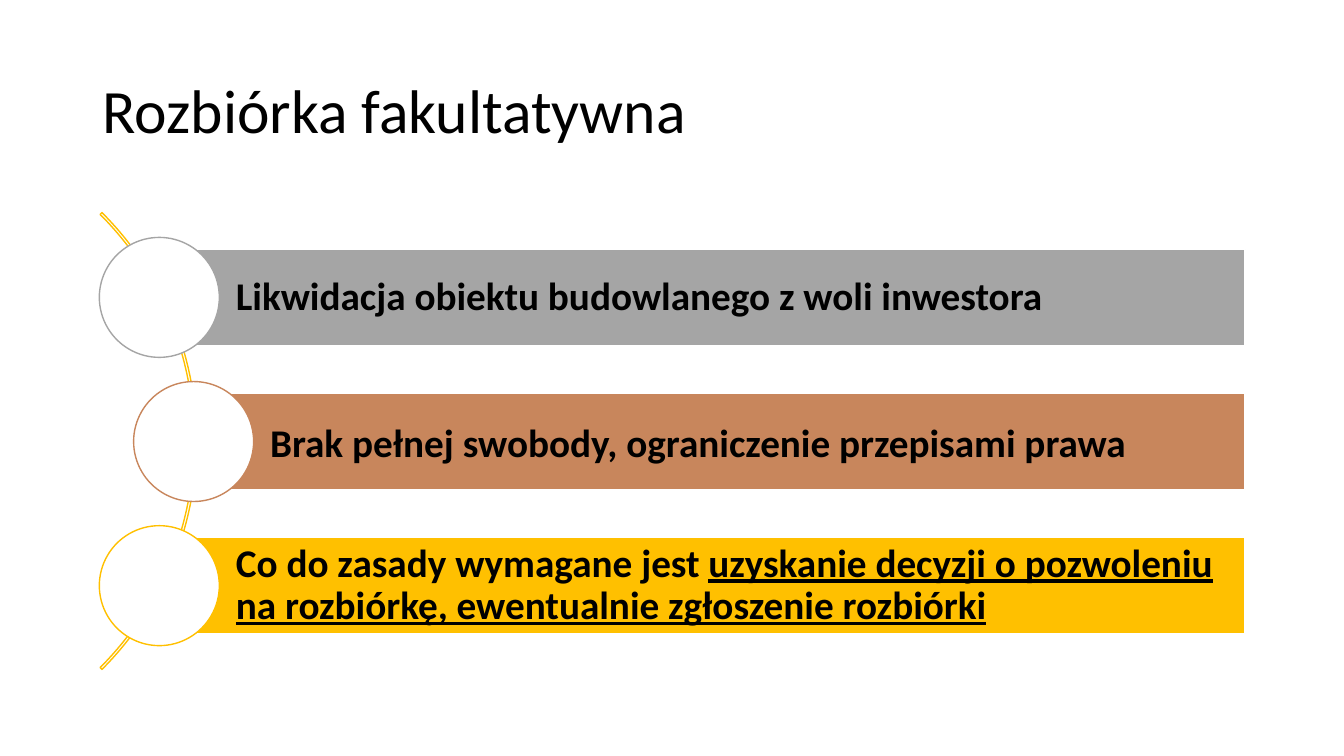
"""Build the slide on optional demolition with three bars along an arc."""
from pptx import Presentation
from pptx.dml.color import RGBColor
from pptx.enum.shapes import MSO_SHAPE
from pptx.enum.text import MSO_ANCHOR, PP_ALIGN
from pptx.util import Inches, Pt

ARC, BAR, CIRCLE = MSO_SHAPE.BLOCK_ARC, MSO_SHAPE.RECTANGLE, MSO_SHAPE.OVAL
MIDDLE, LEFT = MSO_ANCHOR.MIDDLE, PP_ALIGN.LEFT
COLORS = {"black": "000000", "white": "FFFFFF", "gray": "A5A5A5",
          "copper": "C8865C", "gold": "FFC000"}
BAR_RIGHT, BAR_HEIGHT, CIRCLE_SIZE = 12.35, 0.95, 1.19
FIRST_CENTER, ROW_STEP = 2.95, 1.43
ROWS = [
    ("gray", 1.58, 0.08, [("Likwidacja obiektu budowlanego z woli inwestora", False)]),
    ("copper", 1.92, 0.14, [("Brak pełnej swobody, ograniczenie przepisami prawa", False)]),
    ("gold", 1.58, 0.08, [
        ("Co do zasady wymagane jest ", False),
        ("uzyskanie decyzji o pozwoleniu na rozbiórkę, ewentualnie zgłoszenie rozbiórki", True)]),
]

presentation = Presentation()
presentation.slide_width, presentation.slide_height = Inches(13.33), Inches(7.5)
slide = presentation.slides.add_slide(presentation.slide_layouts[6])


def add_outlined(kind, left, top, width, height, line, fill=None):
    """Add a preset shape with a thin outline and an optional fill."""
    shape = slide.shapes.add_shape(kind, Inches(left), Inches(top), Inches(width), Inches(height))
    shape.shadow.inherit = False
    if fill:
        shape.fill.solid()
        shape.fill.fore_color.rgb = RGBColor.from_string(COLORS[fill])
    else:
        shape.fill.background()
    shape.line.color.rgb = RGBColor.from_string(COLORS[line])
    shape.line.width = Pt(1)
    return shape


def write(shape, runs, size, bold):
    """Write one left-aligned paragraph, vertically centred, run by run."""
    frame = shape.text_frame
    frame.word_wrap = True
    frame.vertical_anchor = MIDDLE
    paragraph = frame.paragraphs[0]
    paragraph.alignment = LEFT
    paragraph.line_spacing = 0.9
    for text, underlined in runs:
        run = paragraph.add_run()
        run.text = text
        run.font.name = "Calibri"
        run.font.size = Pt(size)
        run.font.bold = bold
        run.font.underline = underlined
        run.font.color.rgb = RGBColor.from_string(COLORS["black"])


title = slide.shapes.add_textbox(Inches(0.92), Inches(0.4), Inches(11.5), Inches(1.45))
write(title, [("Rozbiórka fakultatywna", False)], 44, False)

arc = add_outlined(ARC, -4.46, 1.17, 6.41, 6.41, "gold")
for index, adjustment in enumerate((189, 27, 0.004)):
    arc.adjustments[index] = adjustment

for index, (color, left, top_inset, runs) in enumerate(ROWS):
    center = FIRST_CENTER + index * ROW_STEP
    bar = add_outlined(BAR, left, center - BAR_HEIGHT / 2, BAR_RIGHT - left, BAR_HEIGHT,
                       "white", color)
    frame = bar.text_frame
    frame.margin_left, frame.margin_right = Inches(0.76), Inches(0.08)
    frame.margin_top, frame.margin_bottom = Inches(top_inset), Inches(0.08)
    write(bar, runs, 28, True)
    add_outlined(CIRCLE, left - CIRCLE_SIZE / 2, center - CIRCLE_SIZE / 2,
                 CIRCLE_SIZE, CIRCLE_SIZE, color, "white")

presentation.save("out.pptx")
